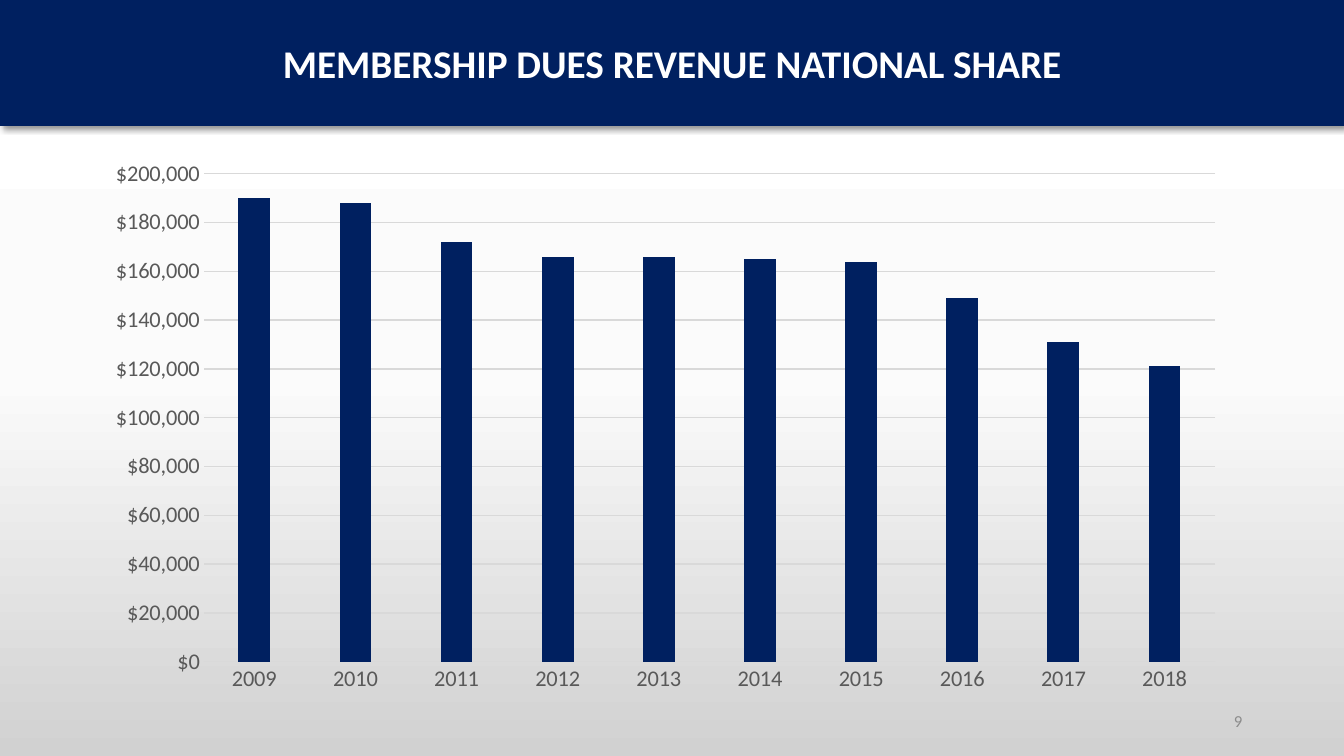
from dataclasses import dataclass

from lxml import etree
from pptx import Presentation
from pptx.chart.data import CategoryChartData
from pptx.dml.color import RGBColor
from pptx.enum.chart import XL_CHART_TYPE, XL_TICK_MARK
from pptx.enum.shapes import MSO_SHAPE
from pptx.enum.text import MSO_ANCHOR, PP_ALIGN
from pptx.oxml import parse_xml
from pptx.oxml.ns import nsdecls, qn
from pptx.util import Inches, Pt


@dataclass(frozen=True)
class Theme:
    font: str = "Calibri"
    navy: str = "002060"
    white: str = "FFFFFF"
    axis_text: str = "595959"
    grid: str = "D9D9D9"
    page_number: str = "8C8C8C"
    shadow: str = "000000"
    backdrop: tuple = ((0, "FFFFFF"), (50, "FBFBFB"), (100, "D1D1D1"))
    title_size: int = 28
    axis_size: int = 16
    page_number_size: int = 12


class DuesSlide:
    def __init__(self, slide, theme):
        self.slide = slide
        self.theme = theme

    def style_font(self, font, size, color, bold=False):
        font.name = self.theme.font
        font.size = Pt(size)
        font.bold = bold
        font.color.rgb = RGBColor.from_string(color)

    def add_text(self, frame, text, size, color, align, bold=False):
        frame.word_wrap = True
        frame.vertical_anchor = MSO_ANCHOR.MIDDLE
        paragraph = frame.paragraphs[0]
        paragraph.alignment = align
        run = paragraph.add_run()
        run.text = text
        self.style_font(run.font, size, color, bold)

    def backdrop(self):
        """Fill the background with a top-to-bottom gradient."""
        fill = self.slide.background.fill
        fill.gradient()
        fill.gradient_angle = 270
        stops = self.slide.element.find(".//" + qn("a:gsLst"))
        for stop in list(stops):
            stops.remove(stop)
        for percent, color in self.theme.backdrop:
            stop = etree.SubElement(stops, qn("a:gs"), pos=str(percent * 1000))
            etree.SubElement(stop, qn("a:srgbClr"), val=color)

    def banner(self, title, width, height):
        banner = self.slide.shapes.add_shape(
            MSO_SHAPE.RECTANGLE, 0, 0, Inches(width), Inches(height))
        banner.fill.solid()
        banner.fill.fore_color.rgb = RGBColor.from_string(self.theme.navy)
        banner.line.fill.background()
        self.cast_shadow(banner)
        self.add_text(banner.text_frame, title, self.theme.title_size,
                      self.theme.white, PP_ALIGN.CENTER, bold=True)

    def cast_shadow(self, shape):
        shape.shadow.inherit = False
        effects = shape.element.spPr.find(qn("a:effectLst"))
        shadow = etree.SubElement(
            effects, qn("a:outerShdw"), blurRad=str(Pt(4)), dist=str(Pt(3)),
            dir=str(45 * 60000), algn="tl", rotWithShape="0")
        color = etree.SubElement(shadow, qn("a:srgbClr"), val=self.theme.shadow)
        etree.SubElement(color, qn("a:alpha"), val="40000")

    def column_chart(self, name, revenue, left, top, width, height):
        data = CategoryChartData()
        data.categories = list(revenue)
        data.add_series(name, list(revenue.values()))
        chart = self.slide.shapes.add_chart(
            XL_CHART_TYPE.COLUMN_STACKED, Inches(left), Inches(top),
            Inches(width), Inches(height), data).chart
        chart.has_legend = False
        chart.has_title = False
        self.style_font(chart.font, self.theme.axis_size, self.theme.axis_text)

        plot = chart.plots[0]
        plot.gap_width = 219
        plot.overlap = 100
        plot.vary_by_categories = False
        columns = plot.series[0].format.fill
        columns.solid()
        columns.fore_color.rgb = RGBColor.from_string(self.theme.navy)

        years, dollars = chart.category_axis, chart.value_axis
        for axis in (years, dollars):
            axis.major_tick_mark = axis.minor_tick_mark = XL_TICK_MARK.NONE
            self.style_font(axis.tick_labels.font, self.theme.axis_size,
                            self.theme.axis_text)
        dollars.minimum_scale, dollars.maximum_scale = 0, 200000
        dollars.major_unit = 20000
        dollars.tick_labels.number_format = '"$"#,##0'
        dollars.tick_labels.number_format_is_linked = False
        dollars.format.line.fill.background()
        dollars.has_major_gridlines = True
        for line, weight in ((years.format.line, 0.75),
                             (dollars.major_gridlines.format.line, 1)):
            line.width = Pt(weight)
            line.color.rgb = RGBColor.from_string(self.theme.grid)
        self.place_plot(chart, x=0.1, y=0.05, w=0.88, h=0.88)

    def place_plot(self, chart, **fractions):
        """Fix the inner plot area as fractions of the chart frame."""
        plot_area = chart.element.find(".//" + qn("c:plotArea"))
        for layout in plot_area.findall(qn("c:layout")):
            plot_area.remove(layout)
        edges = "".join(f'<c:{key} val="{value}"/>'
                        for key, value in fractions.items())
        plot_area.insert(0, parse_xml(
            f'<c:layout {nsdecls("c")}><c:manualLayout>'
            '<c:layoutTarget val="inner"/><c:xMode val="edge"/>'
            f'<c:yMode val="edge"/>{edges}</c:manualLayout></c:layout>'))

    def page_number(self, number, left, top, width, height):
        box = self.slide.shapes.add_textbox(
            Inches(left), Inches(top), Inches(width), Inches(height))
        self.add_text(box.text_frame, number, self.theme.page_number_size,
                      self.theme.page_number, PP_ALIGN.RIGHT)


def main():
    deck = Presentation()
    deck.slide_width, deck.slide_height = Inches(13.33), Inches(7.5)
    dues = DuesSlide(deck.slides.add_slide(deck.slide_layouts[6]), Theme())
    revenue = {
        "2009": 190000, "2010": 188000, "2011": 172000, "2012": 166000,
        "2013": 166000, "2014": 165000, "2015": 164000, "2016": 149000,
        "2017": 131000, "2018": 121000,
    }
    dues.backdrop()
    dues.column_chart("Series 1", revenue, 0.88, 1.45, 11.4, 5.5)
    dues.banner("MEMBERSHIP DUES REVENUE NATIONAL SHARE", 13.33, 1.25)
    dues.page_number("9", 9.42, 6.95, 3, 0.4)
    deck.save("out.pptx")


if __name__ == "__main__":
    main()
